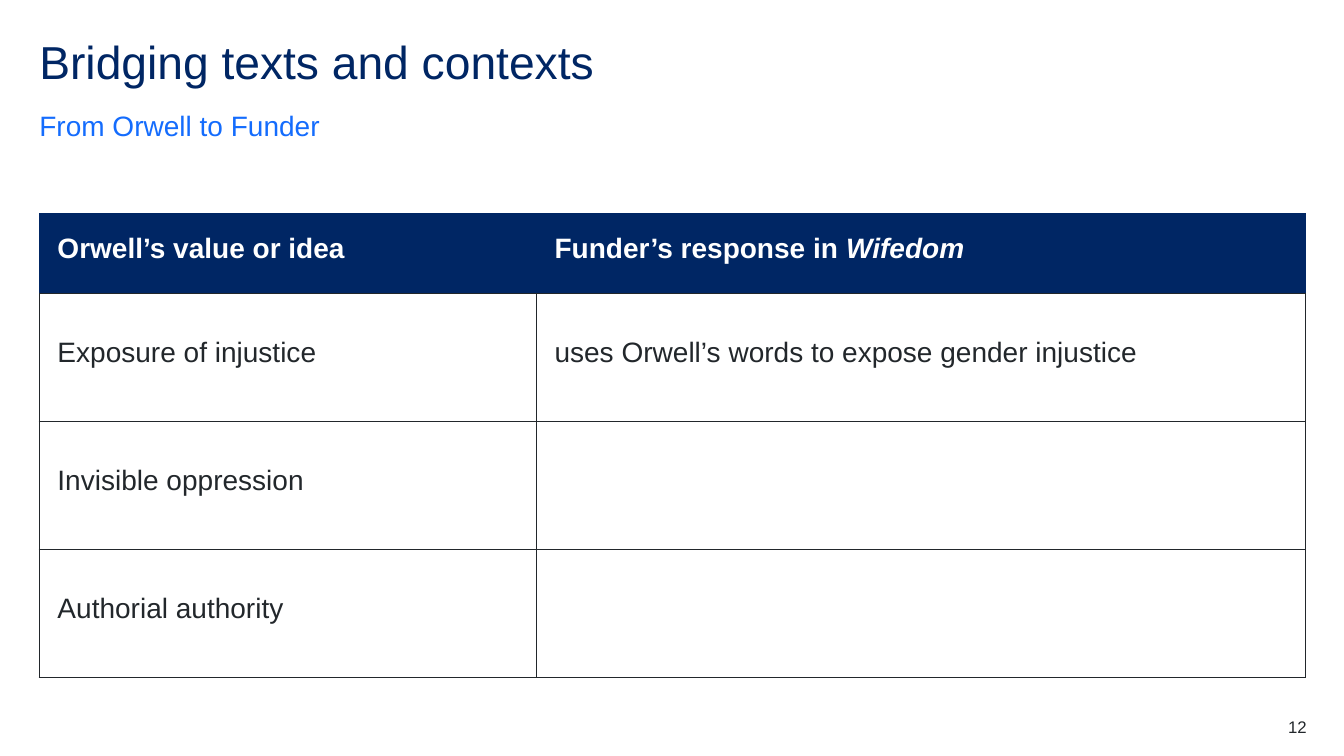
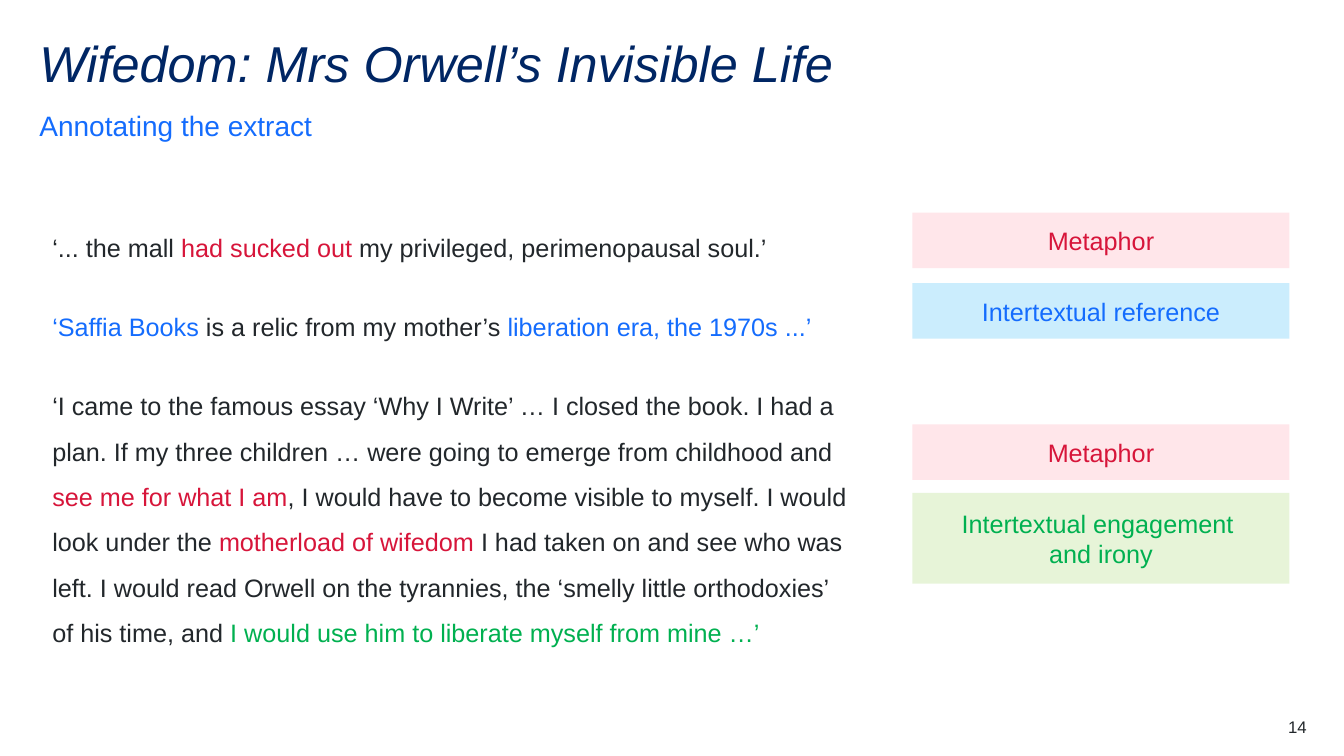
import pptx
import pptx.util
import pptx.dml.color
import pptx.enum.shapes
import pptx.enum.text
import pptx.oxml
import pptx.oxml.ns

Inches, Pt = pptx.util.Inches, pptx.util.Pt
ALIGN = pptx.enum.text.PP_ALIGN
ANCHOR = pptx.enum.text.MSO_ANCHOR
NS = pptx.oxml.ns.nsdecls("a")

FONT = "Arial"
NAVY, BLUE, INK, WHITE = "002664", "146CFD", "22272B", "FFFFFF"
RED, GREEN = "D7153A", "00B050"
PINK, SKY, LIME = "FFE6EA", "CBEDFD", "92D050"
LEFT, WIDE = 0.39, 12.56

# Content: a paragraph is a list of runs, a run is text or (text, format)
ROWS = [
    (["Orwell’s value or idea"],
     ["Funder’s response in ", ("Wifedom", {"italic": True})]),
    (["Exposure of injustice"],
     ["uses Orwell’s words to expose gender injustice"]),
    (["Invisible oppression"], []),
    (["Authorial authority"], []),
]
COLS = [4.93, 7.63]
HIGH = [0.79, 1.27, 1.27, 1.27]

red, blue, green = ({"color": c} for c in (RED, BLUE, GREEN))
QUOTES = [
    ["‘... the mall ", ("had sucked out ", red),
     "my privileged, perimenopausal soul.’"],
    [("‘Saffia Books ", blue), "is a relic from my mother’s ",
     ("liberation era, the 1970s ...’", blue)],
    ["‘I came to the famous essay ‘Why I Write’ … I closed the book. "
     "I had a plan. If my three children … were going to emerge from "
     "childhood and ",
     ("see me for what I am", red),
     ", I would have to become visible to myself. I would look under the ",
     ("motherload of wifedom ", red),
     "I had taken on and see who was left. I would read Orwell on the "
     "tyrannies, the ‘smelly little orthodoxies’ of his time, and ",
     ("I would use him to liberate myself from mine …’", green)],
]
# Text, text colour, fill, opacity in percent, top, height
LABELS = [
    ("Metaphor", RED, PINK, 100, 2.11, 0.55),
    ("Intertextual reference", BLUE, SKY, 100, 2.81, 0.55),
    ("Metaphor", RED, PINK, 100, 4.21, 0.55),
    ("Intertextual engagement \nand irony", GREEN, LIME, 22, 4.89, 0.9),
]


def rgb(code):
    return pptx.dml.color.RGBColor.from_string(code)


def box(*at):
    return [Inches(n) for n in at]


def write(frame, paras, size=18, color=INK, bold=False, italic=False,
          align=ALIGN.LEFT, line=1.0, after=0):
    """Fill a text frame with formatted paragraphs."""
    for i, runs in enumerate(paras):
        para = frame.add_paragraph() if i else frame.paragraphs[0]
        para.alignment, para.line_spacing = align, line
        para.space_before, para.space_after = Pt(0), Pt(after)
        for item in runs:
            text, own = (item, {}) if isinstance(item, str) else item
            for j, part in enumerate(text.split("\n")):
                if j:
                    para.add_line_break()
                run = para.add_run()
                run.text = part
                font = run.font
                font.name, font.size = FONT, Pt(size)
                font.bold, font.italic = bold, own.get("italic", italic)
                font.color.rgb = rgb(own.get("color", color))


def setup(frame, anchor=ANCHOR.TOP, inset=None):
    frame.word_wrap = True
    frame.auto_size = pptx.enum.text.MSO_AUTO_SIZE.NONE
    frame.vertical_anchor = anchor
    if inset is not None:
        frame.margin_left = frame.margin_right = Inches(inset)
        frame.margin_top = frame.margin_bottom = Inches(inset)
    return frame


def place(shape, *at):
    shape.left, shape.top, shape.width, shape.height = box(*at)


def page(deck, title, sub, number, **style):
    """Add a slide with the shared title, subtitle and number."""
    slide = deck.slides.add_slide(deck.slide_layouts[1])
    head, body = slide.placeholders
    place(head, LEFT, 0.39, WIDE, 0.6)
    write(setup(head.text_frame, inset=0), [[title]], color=NAVY,
          line=0.9, **style)
    place(body, LEFT, 1.07, WIDE, 0.34)
    write(setup(body.text_frame, ANCHOR.BOTTOM, 0), [[sub]], size=20,
          color=BLUE, line=1.5, after=12)
    # Subtitle without bullet
    props = body.text_frame.paragraphs[0]._p.get_or_add_pPr()
    props.set("marL", "0")
    props.set("indent", "0")
    props.append(pptx.oxml.parse_xml(f"<a:buNone {NS}/>"))
    foot = slide.shapes.add_textbox(*box(12.17, 7.13, 0.79, 0.2))
    write(setup(foot.text_frame, inset=0), [[number]], size=12,
          align=ALIGN.RIGHT, line=0.9, after=6)
    return slide


def edge(cell, side, color, width):
    cell._tc.get_or_add_tcPr().append(pptx.oxml.parse_xml(
        f'<a:ln{side} {NS} w="{Pt(width)}"><a:solidFill>'
        f'<a:srgbClr val="{color}"/></a:solidFill></a:ln{side}>'))


def grid(slide):
    table = slide.shapes.add_table(
        len(ROWS), len(COLS), *box(LEFT, 2.12, WIDE, sum(HIGH))).table
    for col, width in zip(table.columns, COLS):
        col.width = Inches(width)
    for r, row in enumerate(ROWS):
        table.rows[r].height = Inches(HIGH[r])
        top = r == 0
        for c, runs in enumerate(row):
            cell = table.cell(r, c)
            for side in "LRTB":
                navy = top and side != "B"
                edge(cell, side, NAVY if navy else INK, 0.5 if navy else 1)
            cell.fill.solid()
            cell.fill.fore_color.rgb = rgb(NAVY if top else WHITE)
            cell.vertical_anchor = ANCHOR.MIDDLE
            cell.margin_left = cell.margin_right = Inches(0.18)
            cell.margin_top, cell.margin_bottom = box(0.09, 0.18)
            write(cell.text_frame, [runs], size=20, bold=top,
                  color=WHITE if top else INK)


def label(slide, text, color, fill, alpha, top, high):
    shape = slide.shapes.add_shape(
        pptx.enum.shapes.MSO_SHAPE.RECTANGLE, *box(9.05, top, 3.74, high))
    shape.shadow.inherit = False
    shape.line.fill.background()
    shape.fill.solid()
    shape.fill.fore_color.rgb = rgb(fill)
    if alpha < 100:
        tint = shape._element.spPr.find(".//" + pptx.oxml.ns.qn("a:srgbClr"))
        tint.append(pptx.oxml.parse_xml(
            f'<a:alpha {NS} val="{alpha * 1000}"/>'))
    write(setup(shape.text_frame, ANCHOR.MIDDLE), [[text]], color=color,
          align=ALIGN.CENTER)


def main():
    deck = pptx.Presentation()
    deck.slide_width, deck.slide_height = box(13.33, 7.5)

    # Table of ideas
    slide = page(deck, "Bridging texts and contexts",
                 "From Orwell to Funder", "12", size=33)
    grid(slide)

    # Extract with labels
    slide = page(deck, "Wifedom: Mrs Orwell’s Invisible Life",
                 "Annotating the extract", "14", size=36, italic=True)
    quote = slide.shapes.add_textbox(*box(0.42, 2.11, 8.09, 4.51))
    write(setup(quote.text_frame), QUOTES, line=1.5, after=24)
    for item in LABELS:
        label(slide, *item)

    deck.save("out.pptx")


if __name__ == "__main__":
    main()
